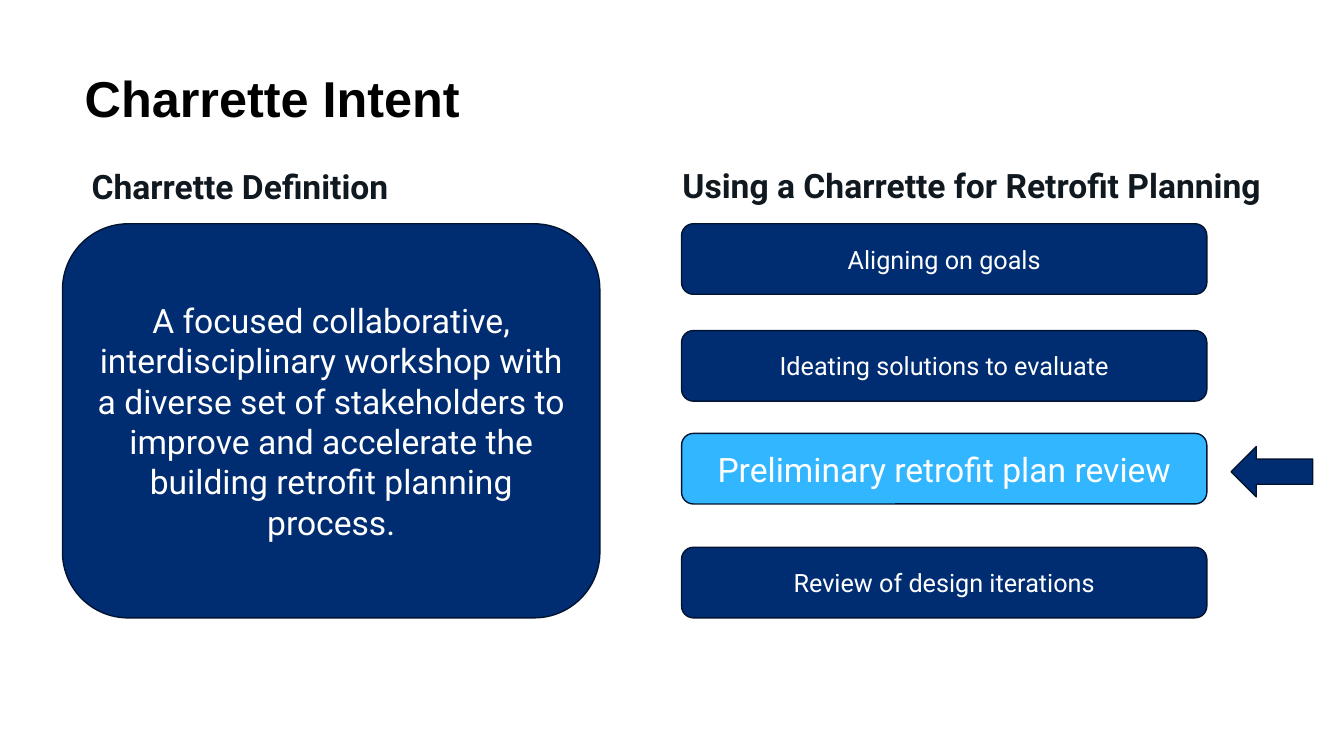
from pptx import Presentation
from pptx.dml.color import RGBColor
from pptx.enum import shapes, text
from pptx.util import Emu, Pt

PX = 9144  # 100 px to the inch
NAVY, SKY, EDGE, INK, WHITE = "002D72", "31B6FF", "001432", "101820", "FFFFFF"
KIND = shapes.MSO_SHAPE


def write(shape, words, size, color, font="Roboto", bold=False, center=False):
    frame = shape.text_frame
    frame.word_wrap = True
    frame.text = words
    frame.vertical_anchor = text.MSO_ANCHOR.MIDDLE if center else text.MSO_ANCHOR.TOP
    para = frame.paragraphs[0]
    para.alignment = text.PP_ALIGN.CENTER if center else text.PP_ALIGN.LEFT
    run = para.runs[0].font
    run.name, run.size, run.bold = font, Pt(size), bold
    run.color.rgb = RGBColor.from_string(color)


def draw(kind, box, fill):
    """Add a filled preset shape with the dark outline."""
    shape = slide.shapes.add_shape(kind, *[Emu(n * PX) for n in box])
    shape.shadow.inherit = False
    shape.fill.solid()
    shape.fill.fore_color.rgb = RGBColor.from_string(fill)
    shape.line.color.rgb = RGBColor.from_string(EDGE)
    shape.line.width = Pt(1)
    return shape


deck = Presentation()
deck.slide_width, deck.slide_height = Emu(1333 * PX), Emu(750 * PX)
slide = deck.slides.add_slide(deck.slide_layouts[5])

title = slide.shapes.title
title.left, title.top, title.width, title.height = [
    Emu(n * PX) for n in (62, 62, 1200, 84)]
write(title, "Charrette Intent", 36, "000000", "Arial", bold=True)
title.text_frame.margin_left = Emu(22 * PX)

heads = [
    ("Charrette Definition", (81, 160, 340, 50)),
    ("Using a Charrette for Retrofit Planning", (667, 159, 667, 50)),
]
for words, box in heads:
    head = slide.shapes.add_textbox(*[Emu(n * PX) for n in box])
    write(head, words, 24, INK, bold=True)

panel = draw(KIND.ROUNDED_RECTANGLE, (62, 222, 533, 391), NAVY)
write(panel, "A focused collaborative, interdisciplinary workshop with a diverse "
      "set of stakeholders to improve and accelerate the building retrofit "
      "planning process.", 24, WHITE, center=True)

steps = [
    (222, "Aligning on goals", 18, NAVY),
    (328, "Ideating solutions to evaluate", 18, NAVY),
    (430, "Preliminary retrofit plan review", 24, SKY),
    (543, "Review of design iterations", 18, NAVY),
]
for top, words, size, fill in steps:
    step = draw(KIND.ROUNDED_RECTANGLE, (676, top, 521, 70), fill)
    write(step, words, size, WHITE, center=True)

draw(KIND.LEFT_ARROW, (1221, 443, 81, 50), NAVY)

deck.save("out.pptx")
